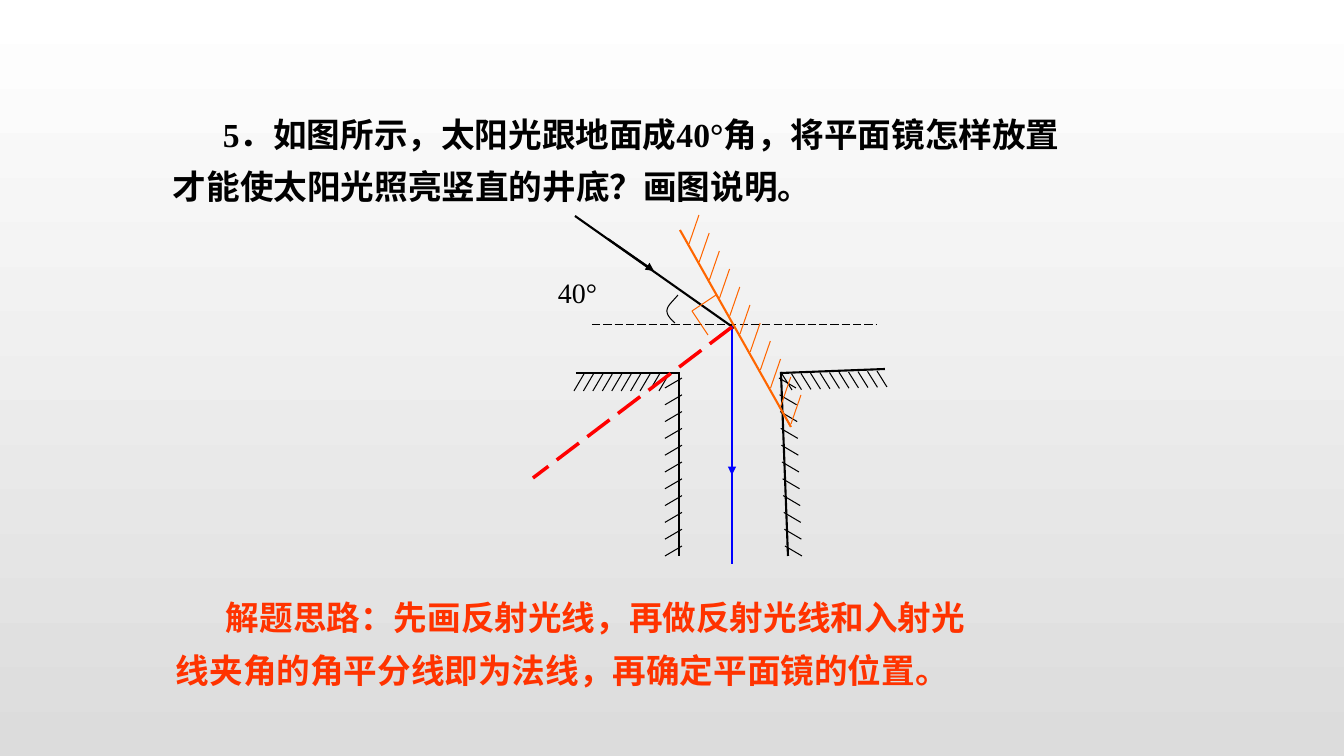
from dataclasses import dataclass

from lxml.etree import SubElement
from pptx import Presentation
from pptx.dml.color import RGBColor
from pptx.enum.dml import MSO_LINE
from pptx.enum.shapes import MSO_CONNECTOR
from pptx.enum.text import MSO_ANCHOR, MSO_AUTO_SIZE
from pptx.oxml.ns import qn
from pptx.util import Pt

EMU_PER_PX = 12192000 / 1344
SLIDE_SIZE = (1344, 756)


@dataclass(frozen=True)
class Theme:
    black: str = "000000"
    blue: str = "0000FF"
    red: str = "FF0000"
    orange: str = "FF6600"
    answer: str = "FF3300"
    background: tuple = ("FFFFFF", "DCDCDC")
    serif: str = "Times New Roman"
    sans: str = "Arial"
    body_size: int = 24
    label_size: int = 20
    thin: float = 0.75
    medium: float = 1.5
    ray: float = 2
    normal: float = 2.5
    line_spacing: float = 1.3


THEME = Theme()

QUESTION = "5．如图所示，太阳光跟地面成40°角，将平面镜怎样放置才能使太阳光照亮竖直的井底？画图说明。"
ANSWER = "解题思路：先画反射光线，再做反射光线和入射光线夹角的角平分线即为法线，再确定平面镜的位置。"
ANGLE = "40°"

QUESTION_BOX = (163, 99, 938, 110)
ANSWER_BOX = (166, 580, 832, 116)
ANGLE_BOX = (548, 271, 81, 55)
PARAGRAPH_INDENT = 50

# start, end, colour, width, dashed, arrow
SUNLIGHT = [
    ((575, 216), (734, 328), THEME.black, THEME.medium, False, False),
    ((608, 239), (654, 271), THEME.black, THEME.medium, False, True),
]
REFLECTION = [
    ((592, 325), (876, 325), THEME.black, THEME.thin, True, False),
    ((732, 326), (732, 564), THEME.blue, THEME.ray, False, False),
    ((732, 386), (732, 475), THEME.blue, THEME.ray, False, True),
    ((732, 327), (533, 478), THEME.red, THEME.normal, True, False),
]

# edge start, edge end, first tick, last tick, tick vector, tick count, colour
WELL = [
    ((576, 373), (679, 373), (584, 374), (669, 374), (-10, 17), 10, THEME.black),
    ((679, 556), (679, 372), (682, 378), (682, 546), (-17, 10), 11, THEME.black),
    ((885, 369), (781, 373), (877, 371), (782, 374), (10, 16), 11, THEME.black),
    ((788, 556), (781, 372), (779, 378), (785, 546), (17, 10), 11, THEME.black),
]
MIRROR = ((680, 230), (791, 427), (689, 244), (791, 424), (10, -29), 11, THEME.orange)

ANGLE_ARC = [(678, 295), (669, 306), (660, 310), (675, 323)]
ARC_STEPS = 16
RIGHT_ANGLE = [(716, 295), (692, 311), (708, 335)]


def emu(px):
    return round(px * EMU_PER_PX)


def rgb(colour):
    return RGBColor.from_string(colour)


def add_line(slide, start, end, colour, width, dashed=False, arrow=False):
    connector = slide.shapes.add_connector(
        MSO_CONNECTOR.STRAIGHT, *map(emu, start + end))
    line = connector.line
    line.color.rgb = rgb(colour)
    line.width = Pt(width)
    if dashed:
        line.dash_style = MSO_LINE.LONG_DASH
    properties = connector._element.spPr
    if arrow:
        SubElement(properties.find(qn("a:ln")), qn("a:tailEnd"), type="triangle")
    SubElement(properties, qn("a:effectLst"))


def add_hatched_edge(slide, start, end, first, last, tick, count, colour):
    """Draw a surface with evenly spaced ticks behind it."""
    for index in range(count):
        share = index / (count - 1)
        foot = tuple(a + (b - a) * share for a, b in zip(first, last))
        tip = tuple(a + b for a, b in zip(foot, tick))
        add_line(slide, foot, tip, colour, THEME.thin)
    add_line(slide, start, end, colour, THEME.medium)


def bezier_points(controls, steps):
    points = []
    for index in range(steps + 1):
        t = index / steps
        weights = ((1 - t) ** 3, 3 * t * (1 - t) ** 2, 3 * t * t * (1 - t), t ** 3)
        points.append(tuple(sum(w * c for w, c in zip(weights, axis))
                            for axis in zip(*controls)))
    return points


def add_open_outline(slide, points, colour):
    corners = [(emu(x), emu(y)) for x, y in points]
    builder = slide.shapes.build_freeform(*corners[0])
    builder.add_line_segments(corners[1:], close=False)
    shape = builder.convert_to_shape()
    shape.shadow.inherit = False
    shape.fill.background()
    shape.line.color.rgb = rgb(colour)
    shape.line.width = Pt(THEME.thin)


def add_text(slide, box, text, font_name, size, colour):
    shape = slide.shapes.add_textbox(*map(emu, box))
    frame = shape.text_frame
    frame.word_wrap = True
    paragraph = frame.paragraphs[0]
    paragraph.text = text
    font = paragraph.font
    font.name, font.size, font.color.rgb = font_name, Pt(size), rgb(colour)
    return frame


def add_body_text(slide, box, text, font_name, colour, anchor):
    frame = add_text(slide, box, text, font_name, THEME.body_size, colour)
    frame.vertical_anchor = anchor
    frame.auto_size = MSO_AUTO_SIZE.SHAPE_TO_FIT_TEXT
    paragraph = frame.paragraphs[0]
    paragraph.font.bold = True
    paragraph.line_spacing = THEME.line_spacing
    paragraph._p.get_or_add_pPr().set("indent", str(emu(PARAGRAPH_INDENT)))


def set_background(slide):
    fill = slide.background.fill
    fill.gradient()
    fill.gradient_angle = 270
    for stop, colour in zip(fill.gradient_stops, THEME.background):
        stop.color.rgb = rgb(colour)


def main():
    presentation = Presentation()
    presentation.slide_width, presentation.slide_height = map(emu, SLIDE_SIZE)
    slide = presentation.slides.add_slide(presentation.slide_layouts[6])
    set_background(slide)

    add_body_text(slide, QUESTION_BOX, QUESTION, THEME.serif, THEME.black,
                  MSO_ANCHOR.MIDDLE)
    for ray in SUNLIGHT:
        add_line(slide, *ray)
    add_text(slide, ANGLE_BOX, ANGLE, THEME.serif, THEME.label_size, THEME.black)
    for edge in WELL:
        add_hatched_edge(slide, *edge)
    add_open_outline(slide, bezier_points(ANGLE_ARC, ARC_STEPS), THEME.black)
    for ray in REFLECTION:
        add_line(slide, *ray)
    add_hatched_edge(slide, *MIRROR)
    add_open_outline(slide, RIGHT_ANGLE, THEME.orange)
    add_body_text(slide, ANSWER_BOX, ANSWER, THEME.sans, THEME.answer,
                  MSO_ANCHOR.TOP)

    presentation.save("out.pptx")


if __name__ == "__main__":
    main()
